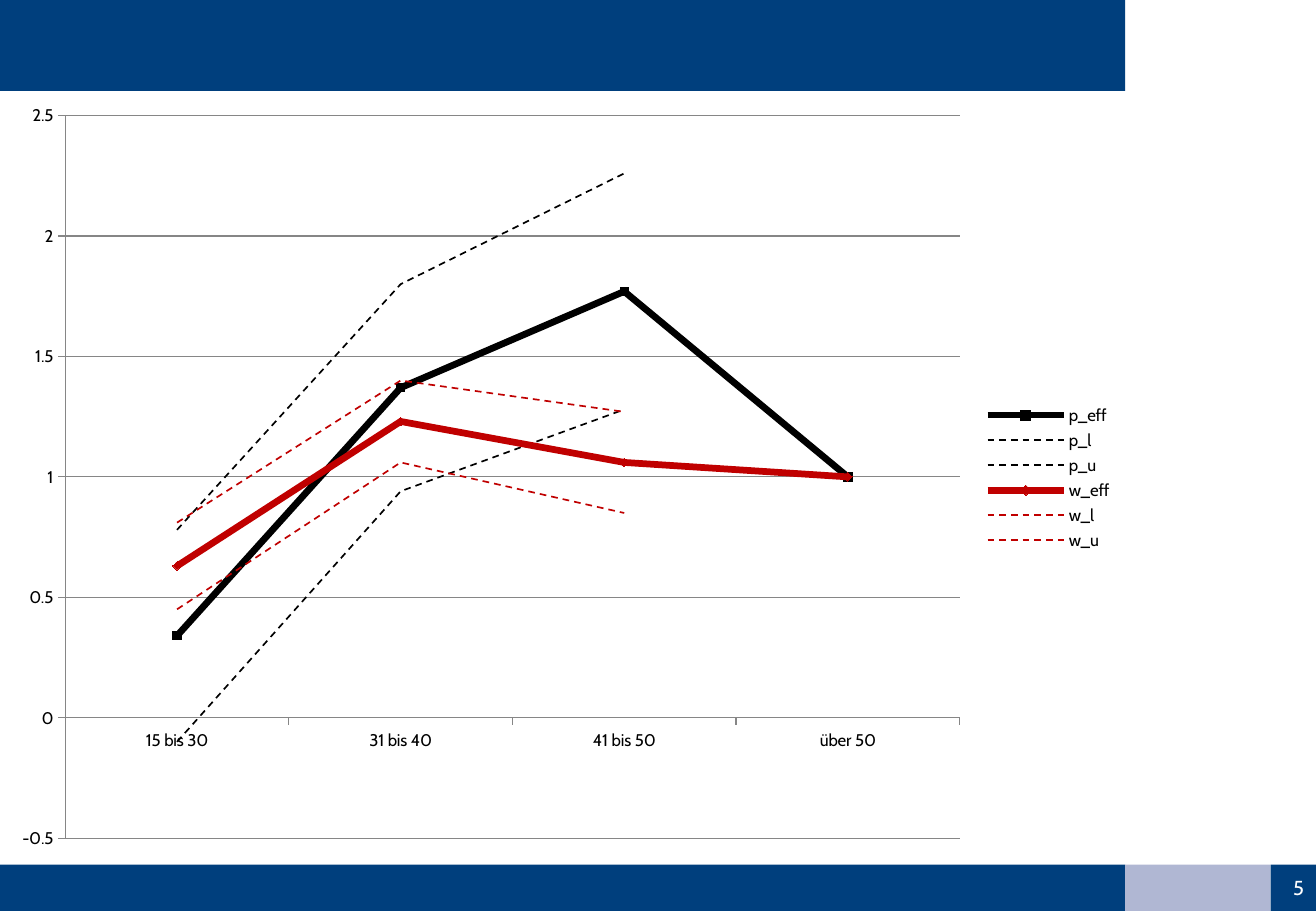
from dataclasses import dataclass
from typing import Optional

from lxml.etree import SubElement
from pptx import Presentation
from pptx.chart.data import CategoryChartData as Data
from pptx.dml.color import RGBColor
from pptx.enum.chart import XL_CHART_TYPE as Kind
from pptx.enum.chart import XL_LEGEND_POSITION as Side
from pptx.enum.chart import XL_MARKER_STYLE as Mark
from pptx.enum.chart import XL_TICK_MARK as Tick
from pptx.enum.dml import MSO_LINE_DASH_STYLE as Dash
from pptx.enum.shapes import MSO_SHAPE as Shape
from pptx.enum.text import MSO_ANCHOR as Anchor
from pptx.enum.text import PP_ALIGN as Align
from pptx.oxml import parse_xml
from pptx.oxml.ns import nsdecls, qn
from pptx.util import Cm, Pt

NAVY = RGBColor(0x00, 0x3F, 0x7D)
LILAC = RGBColor(0xB0, 0xB7, 0xD3)
WHITE = RGBColor(0xFF, 0xFF, 0xFF)
BLACK = RGBColor(0x00, 0x00, 0x00)
RED = RGBColor(0xC0, 0x00, 0x00)
GREY = RGBColor(0x86, 0x86, 0x86)
FONT = "Cabin"

WIDE, HIGH = 27.51, 19.05
MAIN, HEAD = 23.52, 1.9
FOOT, PAGE = 18.08, 26.56
PLOT = {"x": 0.058, "y": 0.032, "w": 0.795, "h": 0.934}
AGES = ["15 bis 30", "31 bis 40", "41 bis 50", "über 50"]


@dataclass
class Bar:
    left: float
    top: float
    right: float
    low: float
    fill: RGBColor
    text: str = ""


@dataclass
class Curve:
    name: str
    vals: list[Optional[float]]
    color: RGBColor
    mark: Optional[Mark] = None


BARS = [
    Bar(0, 0, MAIN, HEAD, NAVY),
    Bar(0, FOOT, MAIN, HIGH, NAVY),
    Bar(MAIN, FOOT, PAGE, HIGH, LILAC),
    Bar(PAGE, FOOT, WIDE, HIGH, NAVY, "5"),
]

CURVES = [
    Curve("p_eff", [0.34, 1.37, 1.77, 1], BLACK, Mark.SQUARE),
    Curve("p_l", [-0.1, 0.94, 1.28, None], BLACK),
    Curve("p_u", [0.78, 1.8, 2.26, None], BLACK),
    Curve("w_eff", [0.63, 1.23, 1.06, 1], RED, Mark.DIAMOND),
    Curve("w_l", [0.45, 1.06, 0.85, None], RED),
    Curve("w_u", [0.81, 1.4, 1.27, None], RED),
]


def write(shape, text: str, *, size: float, color: RGBColor, align: Align) -> None:
    frame = shape.text_frame
    frame.word_wrap = True
    frame.vertical_anchor = Anchor.MIDDLE
    para = frame.paragraphs[0]
    para.alignment = align
    run = para.add_run()
    run.text = text
    run.font.name = FONT
    run.font.size = Pt(size)
    run.font.color.rgb = color


def draw_bar(slide, bar: Bar) -> None:
    shape = slide.shapes.add_shape(
        Shape.RECTANGLE, Cm(bar.left), Cm(bar.top),
        Cm(bar.right - bar.left), Cm(bar.low - bar.top))
    shape.shadow.inherit = False
    shape.fill.solid()
    shape.fill.fore_color.rgb = bar.fill
    shape.line.fill.background()
    if bar.text:
        write(shape, bar.text, size=12, color=WHITE, align=Align.RIGHT)


def style_curve(series, curve: Curve) -> None:
    series.smooth = False
    line = series.format.line
    line.color.rgb = curve.color
    line.width = Pt(4 if curve.mark else 1)
    marker = series.marker
    if curve.mark is None:
        line.dash_style = Dash.DASH
        marker.style = Mark.NONE
        return
    marker.style = curve.mark
    marker.size = 5
    marker.format.fill.solid()
    marker.format.fill.fore_color.rgb = curve.color
    marker.format.line.color.rgb = curve.color


def style_axis(axis) -> None:
    axis.major_tick_mark = Tick.OUTSIDE
    axis.minor_tick_mark = Tick.NONE
    axis.format.line.color.rgb = GREY
    axis.format.line.width = Pt(0.75)


def place_plot(chart) -> None:
    area = chart.element.find(".//" + qn("c:plotArea"))
    old = area.find(qn("c:layout"))
    if old is not None:
        area.remove(old)
    layout = parse_xml(f"<c:layout {nsdecls('c')}><c:manualLayout/></c:layout>")
    rules = {"layoutTarget": "inner", "xMode": "edge", "yMode": "edge", **PLOT}
    for tag, val in rules.items():
        SubElement(layout[0], qn(f"c:{tag}")).set("val", str(val))
    area.insert(0, layout)


def draw_chart(slide) -> None:
    data = Data(number_format="General")
    data.categories = AGES
    for curve in CURVES:
        data.add_series(curve.name, curve.vals)
    chart = slide.shapes.add_chart(
        Kind.LINE_MARKERS, Cm(0), Cm(HEAD), Cm(MAIN), Cm(FOOT - HEAD), data).chart
    chart.has_title = False
    chart.font.name = FONT
    chart.font.size = Pt(10)
    chart.font.color.rgb = BLACK
    chart.has_legend = True
    chart.legend.position = Side.RIGHT
    chart.legend.include_in_layout = False
    chart.plots[0].vary_by_categories = False
    for series, curve in zip(chart.plots[0].series, CURVES):
        style_curve(series, curve)
    style_axis(chart.category_axis)
    scale = chart.value_axis
    style_axis(scale)
    scale.minimum_scale, scale.maximum_scale = -0.5, 2.5
    scale.major_unit = 0.5
    scale.has_major_gridlines = True
    grid = scale.major_gridlines.format.line
    grid.color.rgb = GREY
    grid.width = Pt(0.75)
    place_plot(chart)


def main() -> None:
    deck = Presentation()
    deck.slide_width, deck.slide_height = Cm(WIDE), Cm(HIGH)
    slide = deck.slides.add_slide(deck.slide_layouts[6])
    for bar in BARS:
        draw_bar(slide, bar)
    draw_chart(slide)
    deck.save("out.pptx")


if __name__ == "__main__":
    main()
